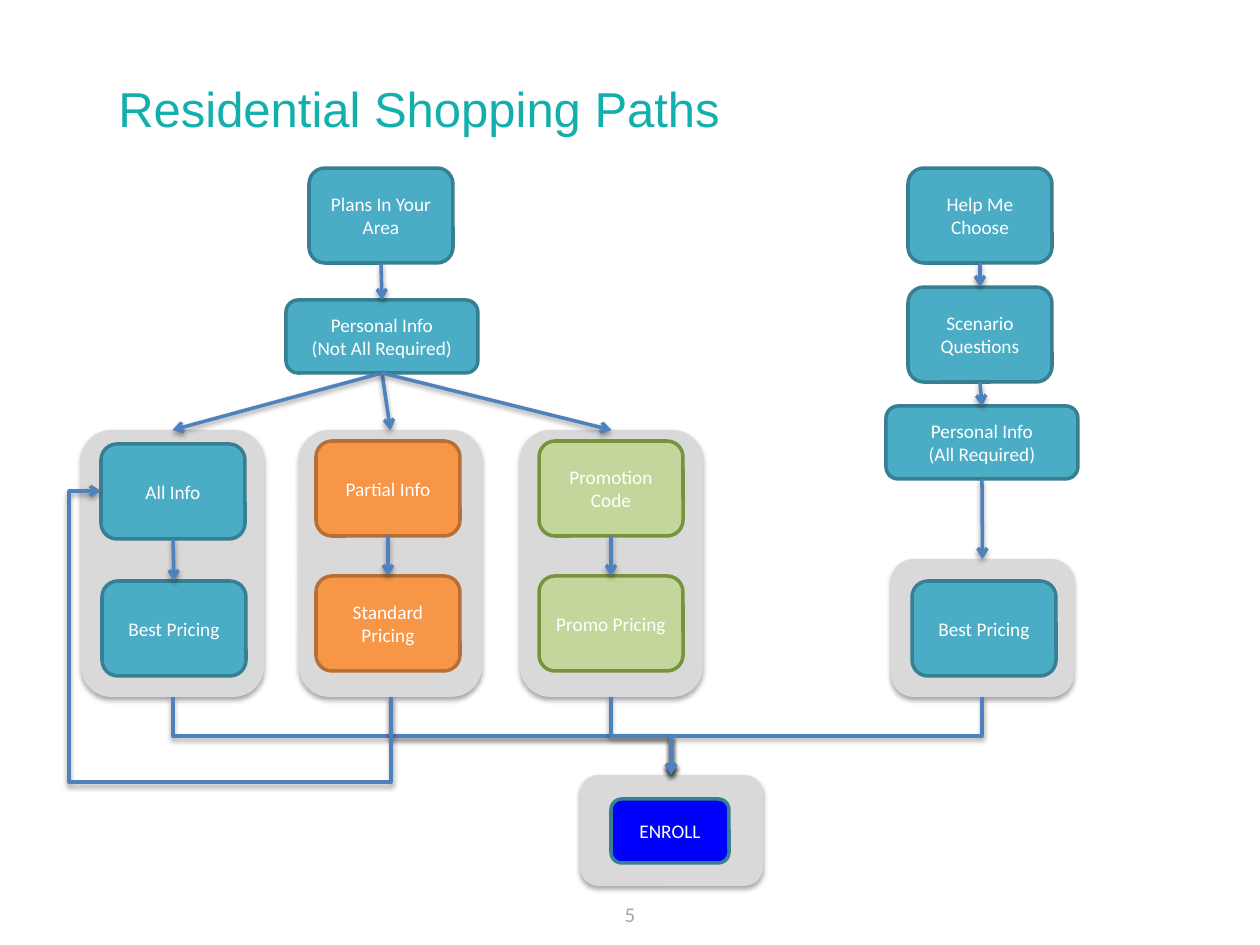
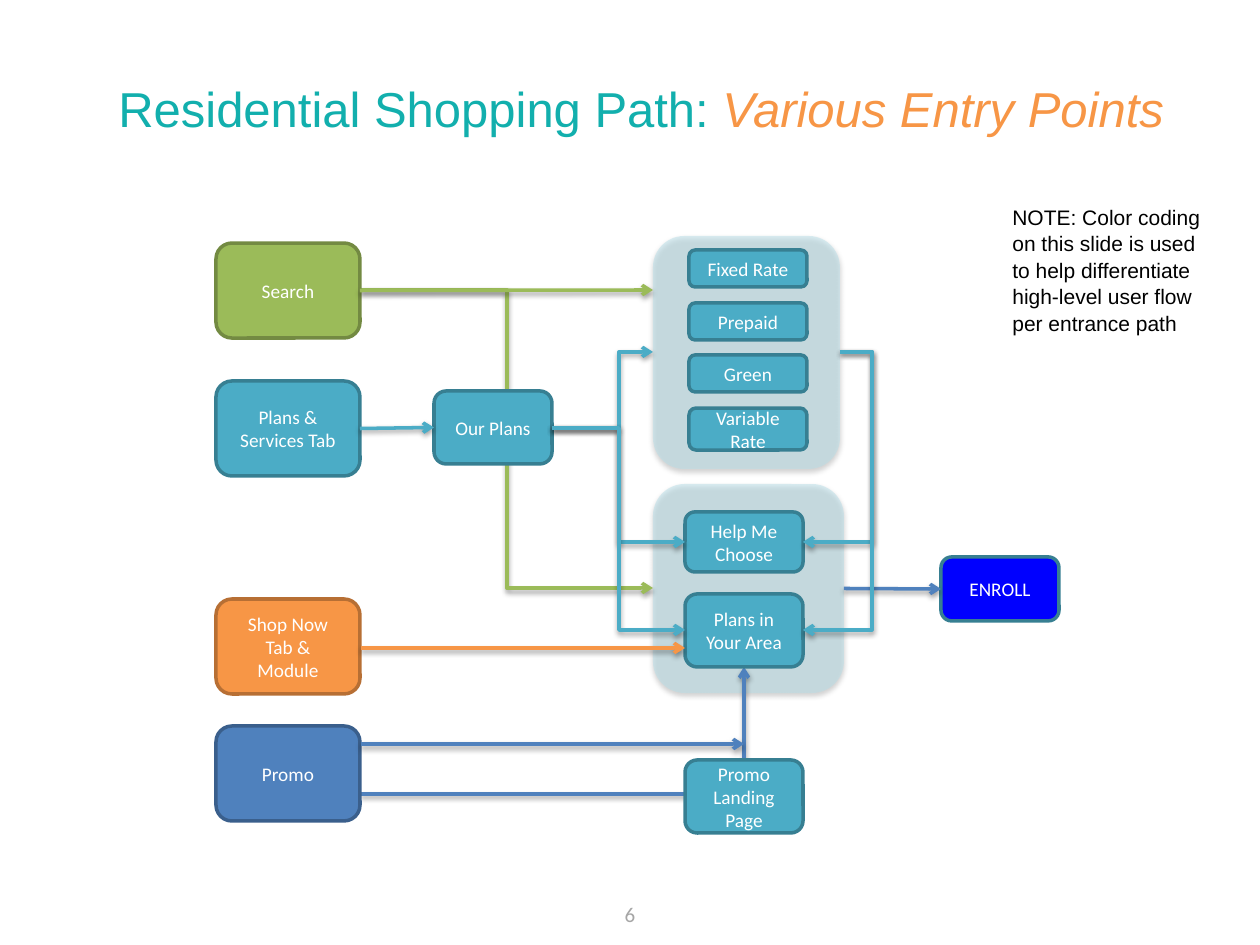
import pptx
import pptx.util
import pptx.oxml.ns
import pptx.dml.color
import pptx.enum.text
import pptx.enum.shapes
from lxml import etree

COLORS = {
    "title": "12AFAD", "number": "A6A6A6", "black": "000000", "white": "FFFFFF",
    "gray": "D9D9D9", "pale": "B7DEE8", "enroll": "0000FF",
    "teal": "4BACC6", "teal_edge": "377F92", "orange": "F79646", "orange_edge": "B76F34",
    "green": "9BBB59", "green_edge": "738A42", "lime": "C3D69B", "lime_edge": "77933C",
    "blue": "4F81BD", "blue_edge": "3A5F8C", "enroll_edge": "377F92",
}
PX = 914400 / 126
TOP, LEFT, BOTTOM, RIGHT = range(4)
STEP = (144, 95)
PERSONAL = (192, 73)
ALIGN = pptx.enum.text.PP_ALIGN
ANCHOR = pptx.enum.text.MSO_ANCHOR
CONNECTOR = pptx.enum.shapes.MSO_CONNECTOR
ROUNDED = pptx.enum.shapes.MSO_SHAPE.ROUNDED_RECTANGLE
qn = pptx.oxml.ns.qn


def emu(*lengths):
    return [pptx.util.Emu(round(length * PX)) for length in lengths]


def rgb(name):
    return pptx.dml.color.RGBColor.from_string(COLORS[name])


def child(parent, tag, **attributes):
    return etree.SubElement(parent, qn(tag), {key: str(value) for key, value in attributes.items()})


class FlowDeck:
    def __init__(self):
        self.deck = pptx.Presentation()
        self.deck.slide_width, self.deck.slide_height = emu(1260, 945)

    def add_page(self, number):
        self.page = self.deck.slides.add_slide(self.deck.slide_layouts[6])
        self.text((0, 895, 1260, 50), str(number), 12, "Calibri", "number", ALIGN.CENTER)

    def style(self, frame, size, font, color, align=ALIGN.LEFT):
        frame.word_wrap = True
        for para in frame.paragraphs:
            para.alignment = align
            for span in para.runs:
                span.font.size = pptx.util.Pt(size)
                span.font.name = font
                span.font.color.rgb = rgb(color)

    def text(self, area, words, size, font, color, align=ALIGN.LEFT):
        frame = self.page.shapes.add_textbox(*emu(*area)).text_frame
        frame.text = words
        self.style(frame, size, font, color, align)
        return frame

    def title(self, words, accent=""):
        frame = self.text((106, 84, 1085, 60), words, 28, "Arial", "title")
        frame.vertical_anchor = ANCHOR.BOTTOM
        if accent:
            span = frame.paragraphs[0].add_run()
            span.text = accent
            self.style(frame, 28, "Arial", "title")
            span.font.color.rgb = rgb("orange")
            span.font.italic = True

    def shadow(self, properties, alpha, distance):
        effects = properties.find(qn("a:effectLst"))
        if effects is None:
            effects = child(properties, "a:effectLst")
        outer = child(effects, "a:outerShdw", blurRad=39370, dist=distance, dir=5400000, rotWithShape=0)
        child(child(outer, "a:srgbClr", val=COLORS["black"]), "a:alpha", val=alpha * 1000)

    def rounded(self, area, color):
        shape = self.page.shapes.add_shape(ROUNDED, *emu(*area))
        shape.shadow.inherit = False
        shape.fill.solid()
        shape.fill.fore_color.rgb = rgb(color)
        return shape

    def panel(self, area, color="gray", opacity=100):
        panel = self.rounded(area, color)
        panel.line.fill.background()
        properties = panel.element.spPr
        if opacity < 100:
            child(properties.find(qn("a:solidFill"))[0], "a:alpha", val=opacity * 1000)
        self.shadow(properties, 35, 22860)
        return panel

    def box(self, left, top, words, color="teal", size=STEP):
        box = self.rounded((left, top, *size), color)
        box.line.color.rgb = rgb(color + "_edge")
        box.line.width = pptx.util.Pt(2)
        box.text_frame.text = words
        box.text_frame.vertical_anchor = ANCHOR.MIDDLE
        self.style(box.text_frame, 11, "Calibri", "white", ALIGN.CENTER)
        return box

    def connector(self, kind, start, end, color):
        connector = self.page.shapes.add_connector(kind, *emu(*start, *end))
        connector.line.color.rgb = rgb(color)
        connector.line.width = pptx.util.Pt(2)
        child(connector.get_or_add_ln(), "a:tailEnd", type="arrow")
        self.shadow(connector.element.spPr, 38, 20320)
        return connector

    def arrow(self, start, end, color="blue"):
        connector = self.connector(CONNECTOR.STRAIGHT, start, end, color)
        return connector

    def link(self, source, source_side, target, target_side, color="blue"):
        connector = self.connector(CONNECTOR.STRAIGHT, (0, 0), (1, 1), color)
        connector.begin_connect(source, source_side)
        connector.end_connect(target, target_side)

    def down(self, source, target):
        self.link(source, BOTTOM, target, TOP)

    def elbow(self, start, end, turns, color="blue", vertical=False):
        axes = (1, 0) if vertical else (0, 1)
        ratios = [(turn - start[axis]) / (end[axis] - start[axis]) for turn, axis in zip(turns, axes)]
        if vertical:
            middle_x, middle_y = [(a + b) / 2 for a, b in zip(start, end)]
            start, end = [(middle_x + y - middle_y, middle_y - x + middle_x) for x, y in (start, end)]
        properties = self.connector(CONNECTOR.ELBOW, start, end, color).element.spPr
        if vertical:
            properties.find(qn("a:xfrm")).set("rot", "5400000")
        geometry = properties.find(qn("a:prstGeom"))
        geometry.set("prst", f"bentConnector{len(turns) + 2}")
        adjustments = geometry.find(qn("a:avLst"))
        for index, ratio in enumerate(ratios, 1):
            child(adjustments, "a:gd", name=f"adj{index}", fmla=f"val {round(ratio * 100000)}")


def shopping_paths(flow):
    flow.add_page(5)
    flow.title("Residential Shopping Paths")
    flow.panel((580, 775, 183, 111))
    path_panels = [flow.panel((left, 430, 183, 267)) for left in (81, 299, 520)]
    help_panel = flow.panel((891, 559, 183, 138))

    plans = flow.box(309, 168, "Plans In Your Area")
    some_info = flow.box(286, 300, "Personal Info\n(Not All Required)", size=PERSONAL)
    flow.down(plans, some_info)
    for panel in path_panels:
        flow.down(some_info, panel)

    for first, second, color in (
        ((101, 444, "All Info"), (102, 581, "Best Pricing"), "teal"),
        ((316, 441, "Partial Info"), (316, 576, "Standard Pricing"), "orange"),
        ((539, 441, "Promotion Code"), (539, 576, "Promo Pricing"), "lime"),
    ):
        flow.down(flow.box(*first, color), flow.box(*second, color))

    help_me = flow.box(908, 168, "Help Me Choose")
    scenario = flow.box(908, 287, "Scenario Questions")
    all_info = flow.box(886, 406, "Personal Info\n(All Required)", size=PERSONAL)
    flow.box(912, 581, "Best Pricing")
    flow.down(help_me, scenario)
    flow.down(scenario, all_info)
    flow.down(all_info, help_panel)

    flow.box(611, 799, "ENROLL", "enroll", (118, 64))
    for exit_x in (173, 391, 611, 982):
        flow.elbow((exit_x, 697), (671, 775), [736], vertical=True)
    flow.elbow((391, 697), (101, 491), [782, 69], vertical=True)


def entry_points(flow):
    flow.add_page(6)
    flow.title("Residential Shopping Path: ", "Various Entry Points")
    choice_panel = flow.panel((653, 484, 191, 209), "pale", 50)
    flow.elbow((361, 794), (744, 667), [])
    flow.elbow((361, 290), (653, 588), [507], "green")
    flow.panel((653, 236, 187, 233), "pale", 50)

    search = flow.box(216, 243, "Search", "green")
    services = flow.box(216, 381, "Plans & Services Tab")
    flow.box(216, 599, "Shop Now Tab & Module", "orange")
    flow.box(216, 726, "Promo", "blue")
    our_plans = flow.box(434, 391, "Our Plans", size=(118, 73))
    flow.box(685, 594, "Plans in Your Area", size=(118, 73))
    flow.box(685, 512, "Help Me Choose", size=(118, 60))
    flow.box(685, 760, "Promo Landing Page", size=(118, 73))
    for top, height, plan in ((250, 37, "Fixed Rate"), (303, 37, "Prepaid"),
                              (355, 37, "Green"), (408, 42, "Variable Rate")):
        flow.box(689, top, plan, size=(118, height))
    enroll = flow.box(941, 557, "ENROLL", "enroll", (118, 64))

    flow.link(services, RIGHT, our_plans, LEFT, "teal")
    flow.link(choice_panel, RIGHT, enroll, LEFT)
    flow.arrow((361, 290), (653, 290), "green").begin_connect(search, RIGHT)
    flow.arrow((361, 648), (685, 648), "orange")
    flow.arrow((361, 744), (744, 744))
    for target in ((653, 352), (685, 542), (685, 630)):
        flow.elbow((552, 428), target, [619], "teal")
    for target_y in (542, 630):
        flow.elbow((840, 352), (803, target_y), [872], "teal")

    note = flow.text((1000, 197, 217, 140), "NOTE: Color coding on this slide is used to help "
                     "differentiate high-level user flow per entrance path", 12, "Arial", "black")
    note.paragraphs[0].line_spacing = 1.05


def main():
    flow = FlowDeck()
    shopping_paths(flow)
    entry_points(flow)
    flow.deck.save("out.pptx")


if __name__ == "__main__":
    main()
